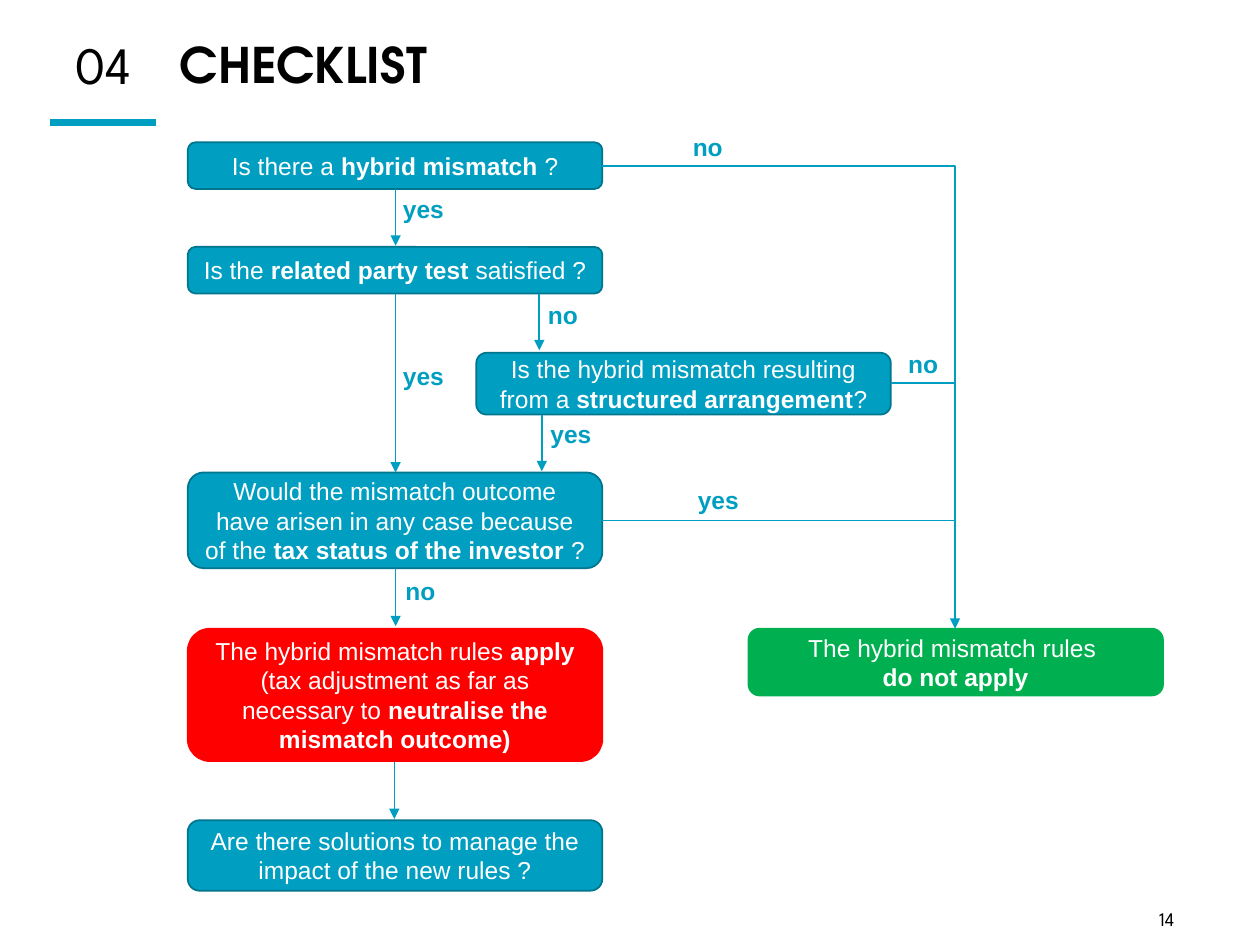
from dataclasses import dataclass

from lxml.etree import SubElement
from pptx import Presentation
from pptx.dml.color import RGBColor as Color
from pptx.enum.shapes import MSO_CONNECTOR as Connector, MSO_SHAPE as Shape
from pptx.enum.text import MSO_ANCHOR as Anchor, PP_ALIGN as Align
from pptx.oxml.ns import qn
from pptx.util import Pt

PX = 9144


@dataclass(frozen=True)
class Theme:
    """Colours, fonts and type sizes of the slide."""
    teal: str = "009EC0"
    edge: str = "00758E"
    red: str = "FF0000"
    green: str = "00B050"
    black: str = "000000"
    white: str = "FFFFFF"
    body_font: str = "Arial"
    number_font: str = "League Spartan"
    title_font: str = "TeX Gyre Adventor"
    body_size: int = 14
    section_size: int = 30
    title_size: int = 28
    page_size: int = 11


THEME = Theme()


def scaled(*lengths):
    """Turn px lengths into EMU."""
    return [length * PX for length in lengths]


def set_attributes(target, values):
    """Set each named value on the target."""
    for name, value in values.items():
        setattr(target, name, value)


def write_text(frame, text, frame_format, paragraph_format, font, size, color, bold=False):
    """Write one paragraph in which starred words are bold."""
    set_attributes(frame, {"word_wrap": True, **frame_format})
    paragraph = frame.paragraphs[0]
    set_attributes(paragraph, paragraph_format)
    for index, piece in enumerate(text.split("*")):
        for number, line in enumerate(piece.split("\n")):
            if number:
                paragraph.add_line_break()
            if line:
                run = paragraph.add_run()
                run.text = line
                set_attributes(run.font, {"name": font, "size": Pt(size),
                                          "bold": bold or index % 2 == 1})
                run.font.color.rgb = Color.from_string(color)


def add_text(slide, bounds, text, font, size, color, bold=False, frame_format=None,
             paragraph_format=None):
    """Add a wrapped text box."""
    shape = slide.shapes.add_textbox(*scaled(*bounds))
    write_text(shape.text_frame, text, frame_format or {}, paragraph_format or {},
               font, size, color, bold)


def add_step(slide, left, top, height, text, fill=THEME.teal, edge=THEME.edge):
    """Add a rounded box of the flow chart."""
    shape = slide.shapes.add_shape(Shape.ROUNDED_RECTANGLE, *scaled(left, top, 329, height))
    shape.shadow.inherit = False
    shape.fill.solid()
    shape.fill.fore_color.rgb = Color.from_string(fill)
    shape.line.color.rgb = Color.from_string(edge)
    shape.line.width = Pt(1)
    write_text(shape.text_frame, text, {"vertical_anchor": Anchor.MIDDLE},
               {"alignment": Align.CENTER}, THEME.body_font, THEME.body_size, THEME.white)


def add_line(slide, ends, arrow=False, width=1, elbow=False):
    """Add a straight or single-bend connector."""
    kind = Connector.ELBOW if elbow else Connector.STRAIGHT
    connector = slide.shapes.add_connector(kind, *scaled(*ends))
    connector.line.color.rgb = Color.from_string(THEME.teal)
    connector.line.width = Pt(width)
    properties = connector._element.spPr
    if elbow:
        properties.find(qn("a:prstGeom")).set("prst", "bentConnector2")
    if arrow:
        SubElement(properties.find(qn("a:ln")), qn("a:tailEnd"), type="triangle")
    SubElement(properties, qn("a:effectLst"))


def add_header(slide):
    """Add the section number, title, rule and page number."""
    middle = {"vertical_anchor": Anchor.MIDDLE}
    centred = {"alignment": Align.CENTER}
    add_line(slide, (124, 97, 40, 97), width=4)
    add_text(slide, (896, 715, 60, 29), "14", THEME.number_font, THEME.page_size,
             THEME.black, paragraph_format=centred)
    add_text(slide, (47, 27, 70, 53), "04", THEME.number_font, THEME.section_size,
             THEME.black, frame_format=middle,
             paragraph_format={"line_spacing": 0.9, **centred})
    add_text(slide, (133, 27, 837, 53), "CHECKLIST", THEME.title_font, THEME.title_size,
             THEME.black, True, middle, {"line_spacing": 0.9})


def main():
    """Build the checklist slide."""
    presentation = Presentation()
    set_attributes(presentation, {"slide_width": 1000 * PX, "slide_height": 750 * PX})
    slide = presentation.slides.add_slide(presentation.slide_layouts[6])
    add_header(slide)

    main_left, exit_x = 149, 758
    main_right = main_left + 329
    steps = [
        (main_left, 113, 37, "Is there a *hybrid mismatch *?"),
        (main_left, 196, 37, "Is the *related party test *satisfied ?"),
        (378, 280, 49, "Is the hybrid mismatch resulting from a *structured arrangement*?"),
        (main_left, 375, 76, "Would the mismatch outcome have arisen in any case because "
                             "of the *tax status of the investor *?"),
        (main_left, 499, 105, "The hybrid mismatch rules *apply *(tax adjustment as far as "
                              "necessary to *neutralise the mismatch outcome)*",
         THEME.red, THEME.red),
        (594, 499, 53, "The hybrid mismatch rules \n*do not apply*", THEME.green, THEME.green),
        (main_left, 651, 56, "Are there solutions to manage the impact of the new rules ?"),
    ]
    for step in steps:
        add_step(slide, *step)

    for x, top, length in [(314, 150, 45), (314, 233, 142), (428, 233, 45),
                           (430, 329, 45), (314, 452, 45), (313, 605, 45)]:
        add_line(slide, (x, top, x, top + length), arrow=True)
    add_line(slide, (main_right, 132, exit_x, 499), arrow=True, elbow=True)
    for x, y in [(707, 304), (main_right, 413)]:
        add_line(slide, (x, y, exit_x, y))

    answers = {
        "no": [(540, 100), (425, 233), (312, 452), (711, 272)],
        "yes": [(310, 149), (310, 282), (427, 328), (544, 380)],
    }
    for answer, places in answers.items():
        for left, top in places:
            add_text(slide, (left, top, 54, 34), answer, THEME.body_font,
                     THEME.body_size, THEME.teal, True)
    presentation.save("out.pptx")


if __name__ == "__main__":
    main()
